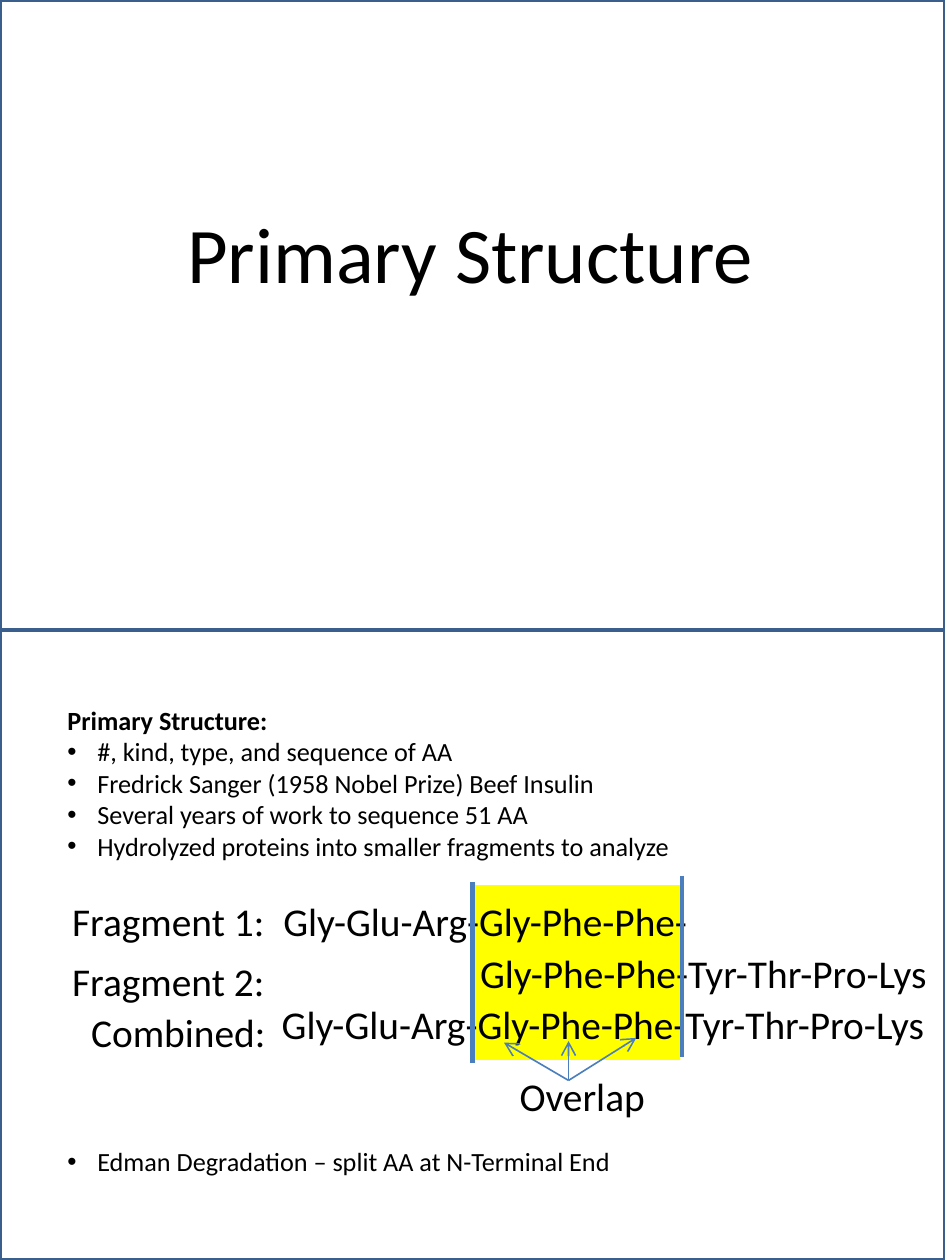
from dataclasses import dataclass

from lxml import etree
from pptx import Presentation
from pptx.dml.color import RGBColor
from pptx.enum.shapes import MSO_CONNECTOR, MSO_SHAPE
from pptx.enum.text import MSO_AUTO_SIZE
from pptx.oxml.ns import qn
from pptx.util import Pt

RECT = MSO_SHAPE.RECTANGLE
LINE = MSO_CONNECTOR.STRAIGHT
GROW = MSO_AUTO_SIZE.SHAPE_TO_FIT_TEXT
SCALE = 9144


@dataclass
class Theme:
    """Colours, font and type sizes of the handout."""
    font: str = "Calibri"
    ink: str = "000000"
    frame: str = "3A5F8C"
    rule: str = "4B7EBC"
    mark: str = "FFFF00"
    title: int = 36
    body: int = 18
    note: int = 12


def px(*vals):
    """Turn px lengths into EMU."""
    return [val * SCALE for val in vals]


class Page:
    """Draws styled elements on one slide."""

    def __init__(self, deck, theme):
        """Add a blank slide to the deck."""
        self.theme = theme
        self.slide = deck.slides.add_slide(deck.slide_layouts[6])

    def box(self, left, top, width, height, fill=None, line=None, weight=2):
        """Draw a rectangle with an optional fill and outline."""
        shape = self.slide.shapes.add_shape(RECT, *px(left, top, width, height))
        shape.shadow.inherit = False
        if fill:
            shape.fill.solid()
            shape.fill.fore_color.rgb = RGBColor.from_string(fill)
        else:
            shape.fill.background()
        if line:
            shape.line.color.rgb = RGBColor.from_string(line)
            shape.line.width = Pt(weight)
        else:
            shape.line.fill.background()

    def text(self, left, top, width, height, words, size):
        """Write unwrapped text and return its paragraphs."""
        shape = self.slide.shapes.add_textbox(*px(left, top, width, height))
        frame = shape.text_frame
        frame.word_wrap = False
        frame.auto_size = GROW
        frame.text = words
        for para in frame.paragraphs:
            for run in para.runs:
                run.font.name = self.theme.font
                run.font.size = Pt(size)
                run.font.color.rgb = RGBColor.from_string(self.theme.ink)
        return frame.paragraphs

    def notes(self, left, top, width, height, head, items, gap):
        """Write a bold heading and bullets, the last one set apart."""
        words = "\n".join([head, *items])
        first, *rest = self.text(left, top, width, height, words, self.theme.note)
        first.runs[0].font.bold = True
        indent = 19 * SCALE
        for para in rest:
            props = para._p.get_or_add_pPr()
            props.set("marL", str(indent))
            props.set("indent", str(-indent))
            etree.SubElement(props, qn("a:buFont")).set("typeface", "Arial")
            etree.SubElement(props, qn("a:buChar")).set("char", "•")
        rest[-1].space_before = Pt(gap)

    def line(self, start, end, weight, arrow=False):
        """Draw a straight line, with an arrowhead at its end if asked."""
        link = self.slide.shapes.add_connector(LINE, *px(*start, *end))
        link.line.color.rgb = RGBColor.from_string(self.theme.rule)
        link.line.width = Pt(weight)
        if arrow:
            tail = etree.SubElement(link.line._ln, qn("a:tailEnd"))
            tail.set("type", "arrow")
        etree.SubElement(link._element.spPr, qn("a:effectLst"))


def main():
    """Build the two-panel handout."""
    deck = Presentation()
    deck.slide_width, deck.slide_height = px(600, 800)
    theme = Theme()
    page = Page(deck, theme)

    page.line((0, 400), (600, 400), 1)
    for top in (0, 400):
        page.box(0, top, 600, 400, line=theme.frame)

    page.text(109, 125, 382, 71, "Primary Structure", theme.title)
    page.notes(33, 442, 406, 313, "Primary Structure:", [
        "#, kind, type, and sequence of AA",
        "Fredrick Sanger (1958 Nobel Prize) Beef Insulin",
        "Several years of work to sequence 51 AA",
        "Hydrolyzed proteins into smaller fragments to analyze",
        "Edman Degradation – split AA at N-Terminal End",
    ], 130)

    page.box(300, 562, 132, 111, fill=theme.mark)
    for left, top, width, words in (
        (169, 630, 435, "Gly-Glu-Arg-Gly-Phe-Phe-Tyr-Thr-Pro-Lys"),
        (295, 598, 308, "Gly-Phe-Phe-Tyr-Thr-Pro-Lys"),
        (170, 565, 281, "Gly-Glu-Arg-Gly-Phe-Phe-"),
        (36, 565, 144, "Fragment 1:"),
        (36, 603, 144, "Fragment 2:"),
        (48, 635, 132, "Combined:"),
        (320, 676, 101, "Overlap"),
    ):
        page.text(left, top, width, 40, words, theme.body)

    for left, top in ((300, 560), (433, 556)):
        page.line((left, top), (left, top + 115), 2)
    for tip in ((320, 662), (361, 661), (404, 659)):
        page.line((361, 686), tip, 0.75, arrow=True)

    deck.save("out.pptx")


if __name__ == "__main__":
    main()
